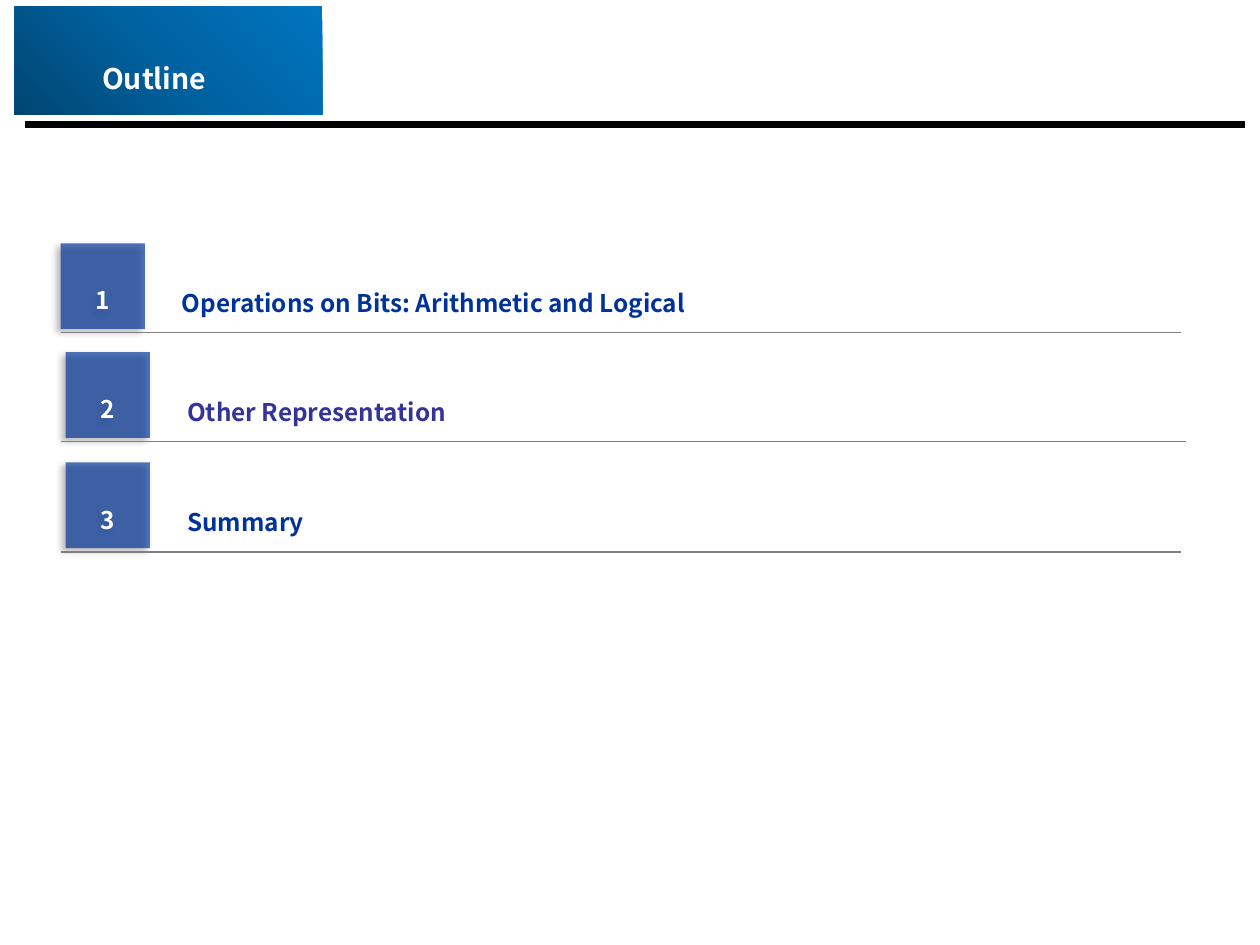
from lxml.etree import SubElement
from pptx import Presentation
from pptx.dml.color import RGBColor
from pptx.enum.shapes import MSO_CONNECTOR, MSO_SHAPE
from pptx.enum.text import MSO_ANCHOR, MSO_AUTO_SIZE, PP_ALIGN
from pptx.oxml.ns import qn
from pptx.util import Pt

FONT = "Noto Sans CJK SC"
NAVY, WHITE = "003399", "FFFFFF"


def paint(color, value):
    color.rgb = RGBColor.from_string(value)


def fill(shape, value):
    shape.fill.solid()
    paint(shape.fill.fore_color, value)


def node(parent, tag, **attrs):
    return SubElement(parent, qn(tag), {k: str(v) for k, v in attrs.items()})


def write(shape, text, size, color, align, pad=(0, 0)):
    frame = shape.text_frame
    frame.text = text
    frame.word_wrap = True
    frame.vertical_anchor = MSO_ANCHOR.MIDDLE
    frame.margin_left = frame.margin_right = Pt(pad[0])
    frame.margin_top = frame.margin_bottom = Pt(pad[1])
    par = frame.paragraphs[0]
    par.alignment = align
    run = par.runs[0]
    run.font.name, run.font.size, run.font.bold = FONT, Pt(size), True
    paint(run.font.color, color)
    # Lowered, reduced lettering
    run.font._element.set("baseline", "-25000")
    return frame


def block(shapes, left, top, width, height):
    shape = shapes.add_shape(MSO_SHAPE.RECTANGLE, Pt(left), Pt(top), Pt(width), Pt(height))
    shape.shadow.inherit = False
    shape.line.fill.background()
    return shape


def rule(shapes, left, right, top, color, width):
    line = shapes.add_connector(MSO_CONNECTOR.STRAIGHT, Pt(left), Pt(top), Pt(right), Pt(top))
    paint(line.line.color, color)
    line.line.width = Pt(width)
    node(line.element.spPr, "a:effectLst")
    return line


def shade(shape):
    effects = shape.element.spPr.find(qn("a:effectLst"))
    cast = node(effects, "a:outerShdw", blurRad=Pt(4), dist=Pt(3),
                dir=135 * 60000, algn="ctr", rotWithShape=0)
    node(node(cast, "a:srgbClr", val="000000"), "a:alpha", val=40000)


def header(slide, left, top, width, height):
    # Black rule across the page
    rule(slide.shapes, left + 5.7, 711.4, top + 67.7, "000000", 3.75)
    # Blue tab with a glow from the lower left corner
    tab = block(slide.shapes, left, top, width, height)
    grad = node(tab.element.spPr, "a:gradFill", rotWithShape=1)
    stops = node(grad, "a:gsLst")
    for pos, color in ((0, "004571"), (50, "0062A1"), (100, "0074BF")):
        node(node(stops, "a:gs", pos=pos * 1000), "a:srgbClr", val=color)
    glow = node(grad, "a:path", path="circle")
    node(glow, "a:fillToRect", t=100000, r=100000)
    tab.element.spPr.find(qn("a:prstGeom")).addnext(grad)
    # Title on top of the tab
    title = slide.shapes.title
    title.left, title.top, title.width, title.height = Pt(left), Pt(18), Pt(159), Pt(34)
    frame = write(title, "Outline", 28, WHITE, PP_ALIGN.CENTER)
    frame.auto_size = MSO_AUTO_SIZE.SHAPE_TO_FIT_TEXT
    tab.element.getparent().append(title.element)


def entry(slide, left, top, width, number, text, color, rules):
    shapes = slide.shapes.add_group_shape().shapes
    # Topic
    label = block(shapes, left + 61.5, top + 7.3, width, 34.6)
    fill(label, WHITE)
    frame = write(label, text, 24, color, PP_ALIGN.LEFT, (7.9, 4.3))
    frame.auto_size = MSO_AUTO_SIZE.SHAPE_TO_FIT_TEXT
    par = frame.paragraphs[0]
    par.line_spacing, par.space_before = 0.9, Pt(6)
    # Number tile
    tile = block(shapes, left, top, 48.2, 49)
    fill(tile, NAVY)
    tone = tile.element.spPr.find(qn("a:solidFill"))[0]
    node(tone, "a:alpha", val=67000)
    shade(tile)
    write(tile, str(number), 24, WHITE, PP_ALIGN.CENTER).word_wrap = False
    # Underline
    for start in rules:
        shade(rule(shapes, start, start + 640, top + 51.2, "808080", 0.75))


def main():
    deck = Presentation()
    deck.slide_width, deck.slide_height = Pt(720), Pt(540)
    slide = deck.slides.add_slide(deck.slide_layouts[5])
    header(slide, 8.6, 3.6, 175.7, 62)
    edge, inset = 34.6, 37.5
    rows = (
        (edge, 139, 584, "Operations on Bits: Arithmetic and Logical", NAVY, [edge]),
        (inset, 201.2, 578, "Other Representation", "333399", [edge, inset]),
        (inset, 264.2, 578, "Summary", NAVY, [edge]),
    )
    for number, (left, top, width, text, color, rules) in enumerate(rows, 1):
        entry(slide, left, top, width, number, text, color, rules)
    deck.save("out.pptx")


if __name__ == "__main__":
    main()
